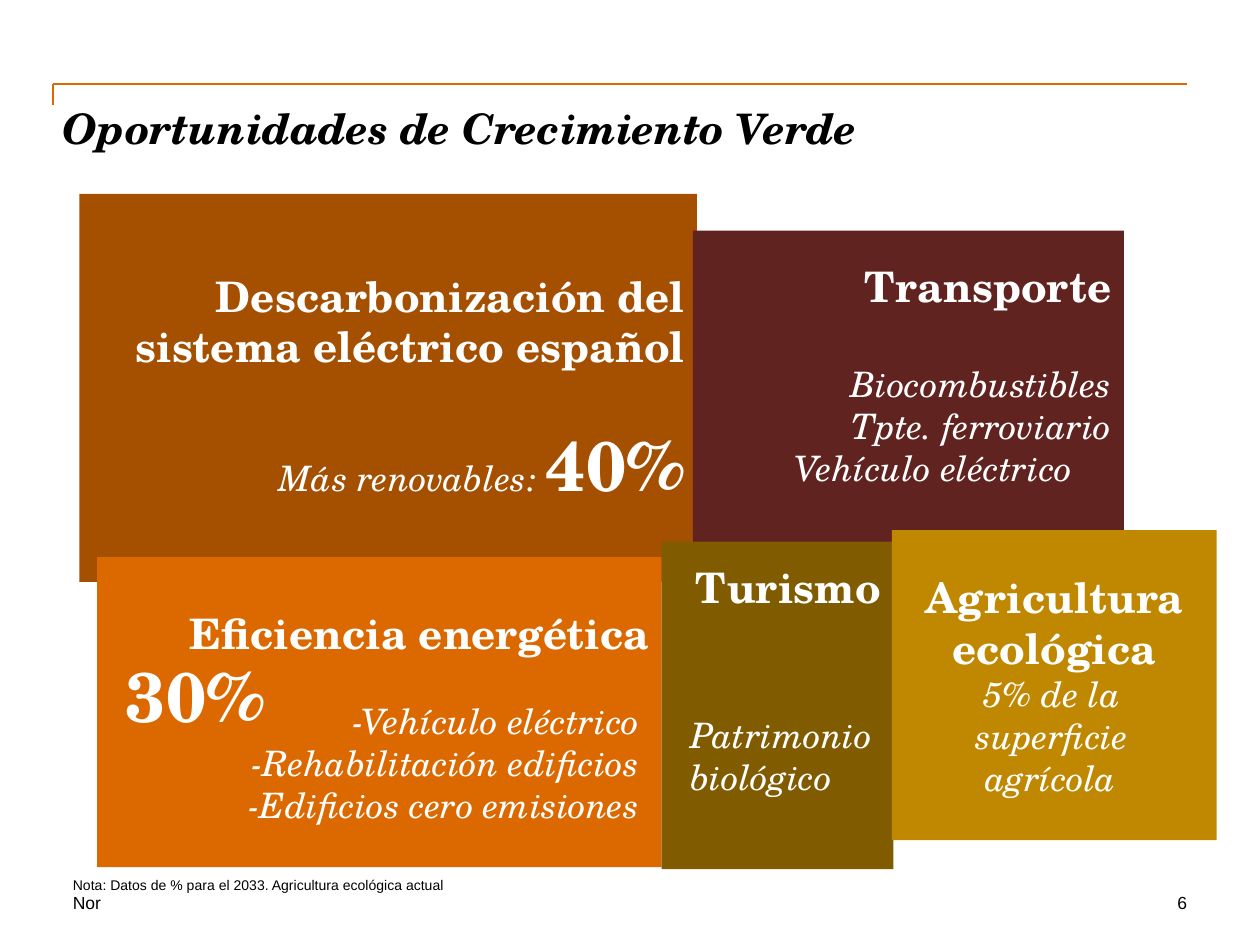
from typing import NamedTuple

from pptx import Presentation
from pptx.dml.color import RGBColor as Rgb
from pptx.enum.shapes import MSO_CONNECTOR as Link, MSO_SHAPE as Shape
from pptx.enum.text import MSO_ANCHOR as Anchor, PP_ALIGN as Align
from pptx.oxml import parse_xml
from pptx.oxml.ns import nsdecls
from pptx.util import Cm, Pt

SERIF, SANS = "TeX Gyre Schola", "Arial"
WHITE, BLACK, ORANGE = "FFFFFF", "000000", "DC6900"


class Style(NamedTuple):
    size: float
    bold: bool = False
    slant: bool = False
    font: str = SERIF
    color: str = WHITE


HEAD = Style(24, bold=True)
ITEM = Style(20, slant=True)
BIG = Style(40, bold=True)
TITLE = Style(24, True, True, color=BLACK)
FOOT = Style(10, font=SANS, color=BLACK)
NOTE = FOOT._replace(size=8)


class Line(NamedTuple):
    text: str
    style: Style = ITEM
    gap: float = 0  # points above
    left: float = 0  # indents in cm
    right: float = 0
    align: Align | None = None
    tail: str = ""  # closing figure in BIG


class Box(NamedTuple):
    x: float
    y: float
    w: float
    h: float
    fill: str
    lines: list[Line]
    align: Align = Align.RIGHT
    top: float = 0.13
    foot: float = 0.13


class Label(NamedTuple):
    x: float
    y: float
    w: float
    h: float
    text: str
    style: Style
    align: Align = Align.LEFT
    wrap: bool = True


BOXES = [
    Box(1.6, 3.91, 12.45, 7.82, "A54F00", [
        Line("Descarbonización del sistema eléctrico español", HEAD),
        Line("Más renovables: ", gap=29, tail="40%"),
    ]),
    Box(13.97, 4.65, 8.69, 6.83, "602320", [
        Line("Transporte", HEAD),
        Line("Biocombustibles", gap=29),
        Line("Tpte. ferroviario"),
        Line("Vehículo eléctrico", right=0.79),
    ], foot=1.16),
    Box(1.96, 11.23, 11.38, 6.25, ORANGE, [
        Line("Eficiencia energética", HEAD),
        Line("-Vehículo eléctrico", gap=24, right=0.2),
        Line("-Rehabilitación edificios"),
        Line("-Edificios cero emisiones"),
    ], top=0.3),
    Box(13.34, 10.92, 4.67, 6.6, "805B00", [
        Line("Turismo", HEAD),
        Line("Patrimonio biológico", gap=58, left=0.33, align=Align.LEFT),
    ], foot=1.16),
    Box(17.98, 10.69, 6.55, 6.25, "BF8800", [
        Line("Agricultura ecológica", HEAD),
        Line("5% de la superficie", left=0.25, right=0.35),
        Line("agrícola", left=0.2),
    ], Align.CENTER),
]

LABELS = [
    Label(1.27, 2.06, 22.43, 2.54, "Oportunidades de Crecimiento Verde", TITLE),
    Label(2.54, 13.16, 3.61, 2.54, "30%", BIG, wrap=False),
    Label(1.47, 17.58, 14.61, 0.43,
          "Nota: Datos de % para el 2033. Agricultura ecológica actual", NOTE),
    Label(1.47, 17.98, 7.19, 0.43, "Nor", FOOT),
    Label(19.69, 17.98, 4.24, 0.43, "6", FOOT, Align.RIGHT),
]

RULES = [(1.07, 1.7, 23.93, 1.7), (1.07, 1.7, 1.07, 2.11)]


def tint(code: str) -> Rgb:
    return Rgb.from_string(code)


def dress(run, style: Style) -> None:
    font = run.font
    font.name, font.size = style.font, Pt(style.size)
    font.bold, font.italic = style.bold, style.slant
    font.color.rgb = tint(style.color)


def inset(frame, side: float, top: float, foot: float) -> None:
    frame.margin_left = frame.margin_right = Cm(side)
    frame.margin_top, frame.margin_bottom = Cm(top), Cm(foot)


def write(para, line: Line, align: Align) -> None:
    para.text = line.text
    para.alignment = line.align or align
    para.space_before = Pt(line.gap)
    dress(para.runs[0], line.style)
    if line.tail:
        run = para.add_run()
        run.text = line.tail
        dress(run, BIG)
    props = para._p.get_or_add_pPr()
    for name, size in (("marL", line.left), ("marR", line.right)):
        if size:
            props.set(name, str(Cm(size)))


def draw_box(shapes, box: Box) -> None:
    rect = shapes.add_shape(Shape.RECTANGLE, Cm(box.x), Cm(box.y),
                            Cm(box.w), Cm(box.h))
    rect.shadow.inherit = False
    rect.fill.solid()
    rect.fill.fore_color.rgb = tint(box.fill)
    rect.line.fill.background()
    frame = rect.text_frame
    frame.word_wrap = True
    frame.vertical_anchor = Anchor.MIDDLE
    inset(frame, 0.25, box.top, box.foot)
    for i, line in enumerate(box.lines):
        para = frame.add_paragraph() if i else frame.paragraphs[0]
        write(para, line, box.align)


def draw_label(shapes, label: Label) -> None:
    area = shapes.add_textbox(Cm(label.x), Cm(label.y), Cm(label.w), Cm(label.h))
    frame = area.text_frame
    frame.word_wrap = label.wrap
    frame.vertical_anchor = Anchor.BOTTOM if label.style == NOTE else Anchor.TOP
    inset(frame, 0, 0, 0)
    write(frame.paragraphs[0], Line(label.text, label.style), label.align)


def draw_rule(shapes, ends: tuple[float, ...]) -> None:
    rule = shapes.add_connector(Link.STRAIGHT, *map(Cm, ends))
    rule.line.color.rgb = tint(ORANGE)
    rule.line.width = Pt(1)
    rule._element.spPr.append(parse_xml(f"<a:effectLst {nsdecls('a')}/>"))


def main() -> None:
    deck = Presentation()
    deck.slide_width, deck.slide_height = Cm(25.4), Cm(19.05)
    shapes = deck.slides.add_slide(deck.slide_layouts[6]).shapes
    for ends in RULES:
        draw_rule(shapes, ends)
    for box in BOXES:
        draw_box(shapes, box)
    for label in LABELS:
        draw_label(shapes, label)
    deck.save("out.pptx")


if __name__ == "__main__":
    main()
